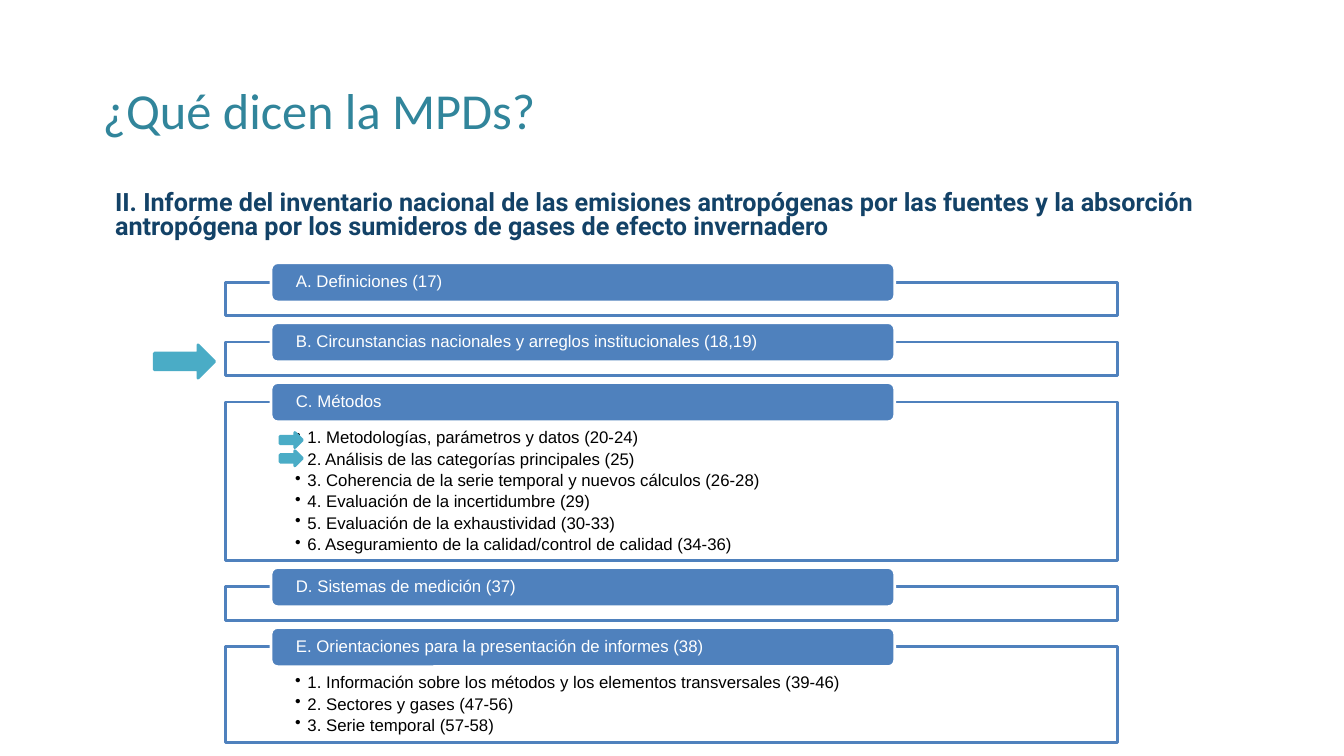
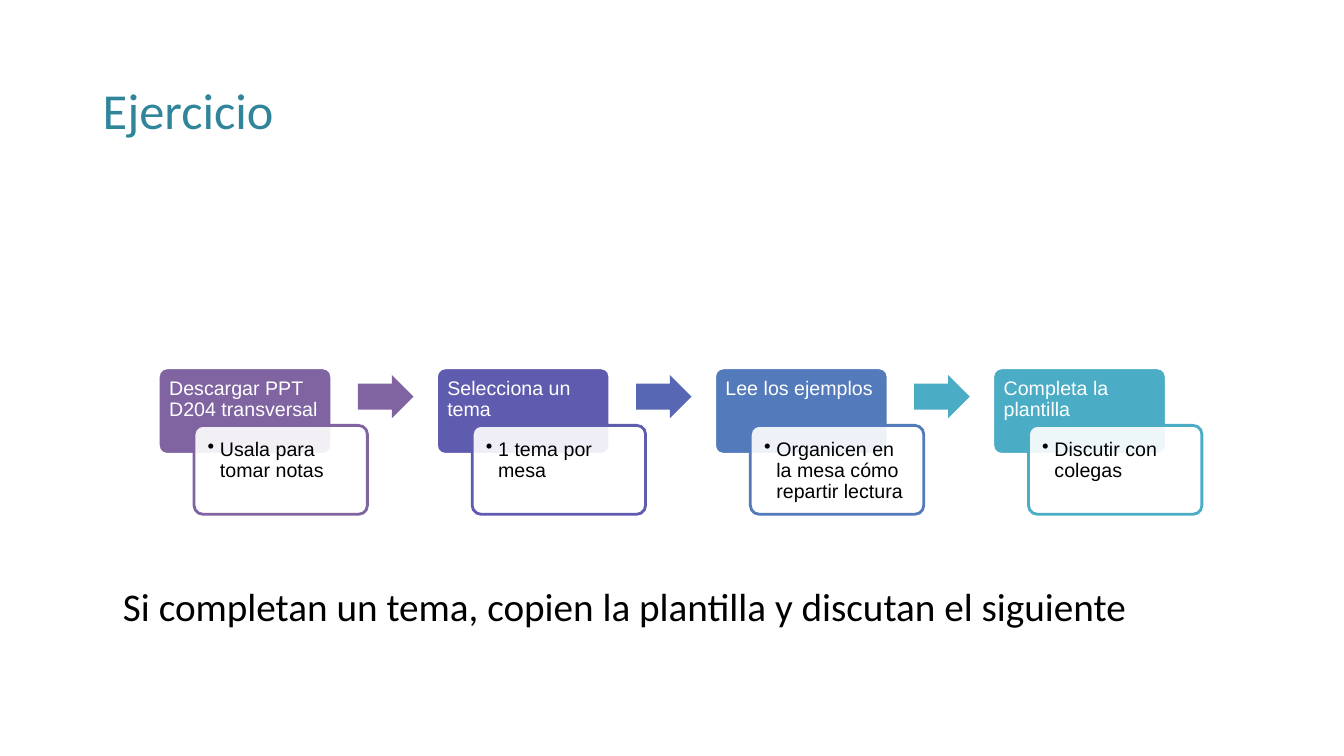
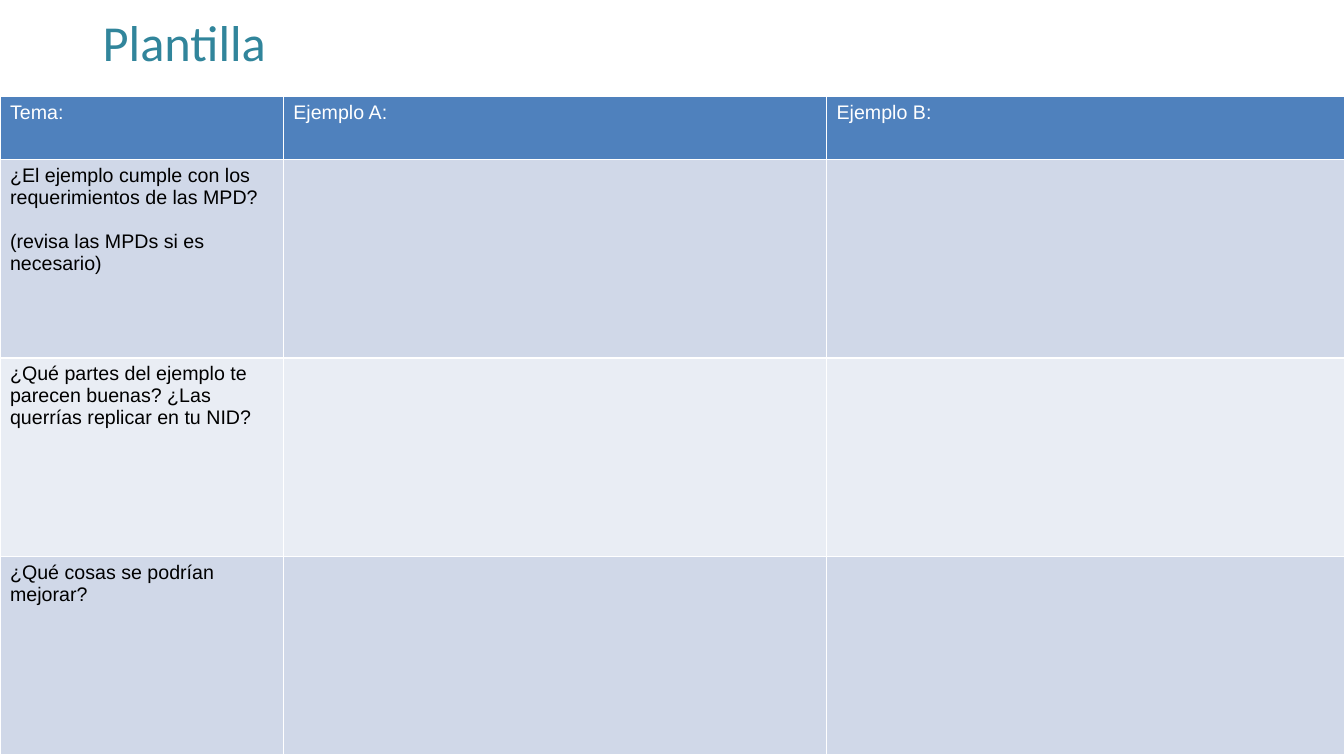
import pptx
import pptx.util
import pptx.dml.color
import pptx.enum.shapes
import pptx.enum.text
import pptx.oxml
import pptx.oxml.ns
from dataclasses import dataclass
from lxml import etree

Cm = pptx.util.Cm
Pt = pptx.util.Pt
qn = pptx.oxml.ns.qn
Kind = pptx.enum.shapes.MSO_SHAPE
Anchor = pptx.enum.text.MSO_ANCHOR
Align = pptx.enum.text.PP_ALIGN


@dataclass(frozen=True)
class Theme:
    white: str = "FFFFFF"
    black: str = "000000"
    teal: str = "31859B"
    navy: str = "134267"
    blue: str = "4F81BD"
    aqua: str = "4AACC6"
    odd: str = "D0D8E8"
    even: str = "E9EDF4"
    steps: tuple = ("8064A2", "5F5BAE", "537ABA", "4BACC6")
    links: tuple = ("8064A2", "5767B4", "4BACC6")
    head: str = "Calibri"
    lead: str = "Roboto"
    body: str = "Arial"
    big: int = 36
    large: int = 28
    mid: int = 18
    text: int = 14
    small: int = 12


def rgb(tone):
    return pptx.dml.color.RGBColor.from_string(tone)


class Deck:
    def __init__(self, theme):
        self.theme = theme
        self.show = pptx.Presentation()
        self.show.slide_width = Cm(33.87)
        self.show.slide_height = Cm(19.05)
        self.slide = None

    def page(self, title, top=1.02):
        self.slide = self.show.slides.add_slide(self.show.slide_layouts[6])
        t = self.theme
        self.label((2.34, top, 29.21, 3.68), title, t.big, t.teal, t.head,
                   anchor=Anchor.MIDDLE)

    def place(self, frame, lines, size, tone, face=None,
              pad=(0.25, 0.13, 0.25, 0.13), anchor=Anchor.TOP,
              space=0.9, **style):
        frame.word_wrap = True
        frame.vertical_anchor = anchor
        (frame.margin_left, frame.margin_top,
         frame.margin_right, frame.margin_bottom) = map(Cm, pad)
        self.fill(frame, lines, size, tone, face, space=space, **style)

    def fill(self, frame, lines, size, tone, face=None, bold=False,
             bullet=False, space=1.0, after=0, before=0):
        lines = [lines] if isinstance(lines, str) else lines
        for n, line in enumerate(lines):
            par = frame.add_paragraph() if n else frame.paragraphs[0]
            par.text = line
            par.alignment = Align.LEFT
            par.line_spacing = space
            par.space_after = Pt(after)
            par.space_before = Pt(before if n else 0)
            if bullet:
                props = par._p.get_or_add_pPr()
                props.set("marL", str(Cm(0.31)))
                props.set("indent", str(-Cm(0.31)))
                etree.SubElement(props, qn("a:buChar")).set("char", "•")
            font = par.font
            font.name = face or self.theme.body
            font.size = Pt(size)
            font.bold = bold
            font.color.rgb = rgb(tone)

    def label(self, box, lines, size, tone, face, **style):
        item = self.slide.shapes.add_textbox(*map(Cm, box))
        self.place(item.text_frame, lines, size, tone, face, **style)

    def shape(self, kind, box, fill, line=None, alpha=None, adj=()):
        item = self.slide.shapes.add_shape(kind, *map(Cm, box))
        item.shadow.inherit = False
        item.fill.solid()
        item.fill.fore_color.rgb = rgb(fill)
        if alpha:
            tone = item.element.spPr.find(qn("a:solidFill"))[0]
            etree.SubElement(tone, qn("a:alpha")).set("val", str(alpha * 1000))
        if line:
            item.line.color.rgb = rgb(line)
            item.line.width = Pt(2)
        else:
            item.line.fill.background()
        for n, value in enumerate(adj):
            item.adjustments[n] = value
        return item

    def arrow(self, box):
        tone = self.theme.aqua
        self.shape(Kind.RIGHT_ARROW, box, tone, tone)

    def group(self, top, high, name, items):
        t = self.theme
        frame = self.shape(Kind.RECTANGLE, (5.69, top, 22.48, high),
                           t.white, t.blue, alpha=90)
        if items:
            self.place(frame.text_frame, items, t.small, t.black, bullet=True,
                       pad=(1.75, 0.69, 1.75, 0.23), after=2.3)
        tab = self.shape(Kind.ROUNDED_RECTANGLE, (6.83, top - 0.49, 15.72, 0.99),
                         t.blue, t.white)
        self.place(tab.text_frame, name, t.small, t.white,
                   pad=(0.58, 0, 0.58, 0), anchor=Anchor.MIDDLE)

    def step(self, left, tone, name, note):
        t = self.theme
        tile = self.shape(Kind.ROUNDED_RECTANGLE, (left, 9.27, 4.37, 2.18),
                          tone, t.white, adj=(0.1,))
        self.place(tile.text_frame, name, t.text, t.white,
                   pad=(0.21, 0.21, 0.21, 0.15))
        card = self.shape(Kind.ROUNDED_RECTANGLE, (left + 0.9, 10.72, 4.37, 2.24),
                          t.white, tone, alpha=90, adj=(0.1,))
        self.place(card.text_frame, note, t.text, t.black, bullet=True,
                   pad=(0.28, 0.28, 0.28, 0.28))

    def table(self, top, wide, high, rows):
        t = self.theme
        grid = self.slide.shapes.add_table(
            len(rows), len(wide), 0, Cm(top), Cm(sum(wide)), Cm(sum(high))).table
        for col, size in zip(grid.columns, wide):
            col.width = Cm(size)
        for r, row in enumerate(rows):
            grid.rows[r].height = Cm(high[r])
            back = (t.odd if r % 2 else t.even) if r else t.blue
            for c in range(len(wide)):
                cell = grid.cell(r, c)
                self.edge(cell)
                cell.fill.solid()
                cell.fill.fore_color.rgb = rgb(back)
                lines = row[c] if c < len(row) else ""
                self.fill(cell.text_frame, lines, t.text,
                          t.black if r else t.white, before=16)

    def edge(self, cell):
        props = cell._tc.get_or_add_tcPr()
        for side in "LRTB":
            line = etree.SubElement(props, qn("a:ln" + side), w=str(Pt(1)))
            solid = etree.SubElement(line, qn("a:solidFill"))
            etree.SubElement(solid, qn("a:srgbClr"), val=self.theme.white)


def rules(deck):
    t = deck.theme
    deck.page("¿Qué dicen la MPDs?")
    deck.label((2.34, 4.7, 29.21, 1.88),
               "II. Informe del inventario nacional de las emisiones antropógenas "
               "por las fuentes y la absorción antropógena por los sumideros de "
               "gases de efecto invernadero",
               t.mid, t.navy, t.lead, bold=True, space=0.8,
               pad=(0.56, 0.13, 0.25, 0.13))
    groups = (
        ("A. Definiciones (17)", 0.84, ()),
        ("B. Circunstancias nacionales y arreglos institucionales (18,19)", 0.84, ()),
        ("C. Métodos", 3.99, (
            "1. Metodologías, parámetros y datos (20-24)",
            "2. Análisis de las categorías principales (25)",
            "3. Coherencia de la serie temporal y nuevos cálculos (26-28)",
            "4. Evaluación de la incertidumbre (29)",
            "5. Evaluación de la exhaustividad (30-33)",
            "6. Aseguramiento de la calidad/control de calidad (34-36)")),
        ("D. Sistemas de medición (37)", 0.84, ()),
        ("E. Orientaciones para la presentación de informes (38)", 2.41, (
            "1. Información sobre los métodos y los elementos transversales (39-46)",
            "2. Sectores y gases (47-56)",
            "3. Serie temporal (57-58)")),
    )
    top = 7.11
    for name, high, items in groups:
        deck.group(top, high, name, items)
        top += high + 0.67
    deck.arrow((3.89, 8.69, 1.52, 0.84))
    for top in (10.9, 11.36):
        deck.arrow((7.06, top, 0.56, 0.38))


def task(deck):
    t = deck.theme
    deck.page("Ejercicio")
    steps = (
        ("Descargar PPT D204 transversal", "Usala para tomar notas"),
        ("Selecciona un tema", "1 tema por mesa"),
        ("Lee los ejemplos", "Organicen en la mesa cómo repartir lectura"),
        ("Completa la plantilla", "Discutir con colegas"),
    )
    pitch = 7.01
    for n, (name, note) in enumerate(steps):
        deck.step(3.99 + n * pitch, t.steps[n], name, note)
    for n, tone in enumerate(t.links):
        deck.shape(Kind.RIGHT_ARROW, (9.02 + n * pitch, 9.45, 1.4, 1.09),
                   tone, adj=(0.6, 0.5))
    deck.label((2.54, 14.68, 29.21, 4.3),
               "Si completan un tema, copien la plantilla y discutan el siguiente",
               t.large, t.black, t.head, pad=(0.56, 0.13, 0.25, 0.13))


def form(deck):
    deck.page("Plantilla", top=-0.71)
    deck.table(2.44, (7.14, 13.69, 13.06), (1.58, 5, 5, 5), (
        ("Tema:", "Ejemplo A:", "Ejemplo B:"),
        (("¿El ejemplo cumple con los requerimientos de las MPD?",
          "(revisa las MPDs si es necesario)"),),
        ("¿Qué partes del ejemplo te parecen buenas? "
         "¿Las querrías replicar en tu NID?",),
        ("¿Qué cosas se podrían mejorar?",),
    ))


def main():
    deck = Deck(Theme())
    rules(deck)
    task(deck)
    form(deck)
    deck.show.save("out.pptx")


if __name__ == "__main__":
    main()
